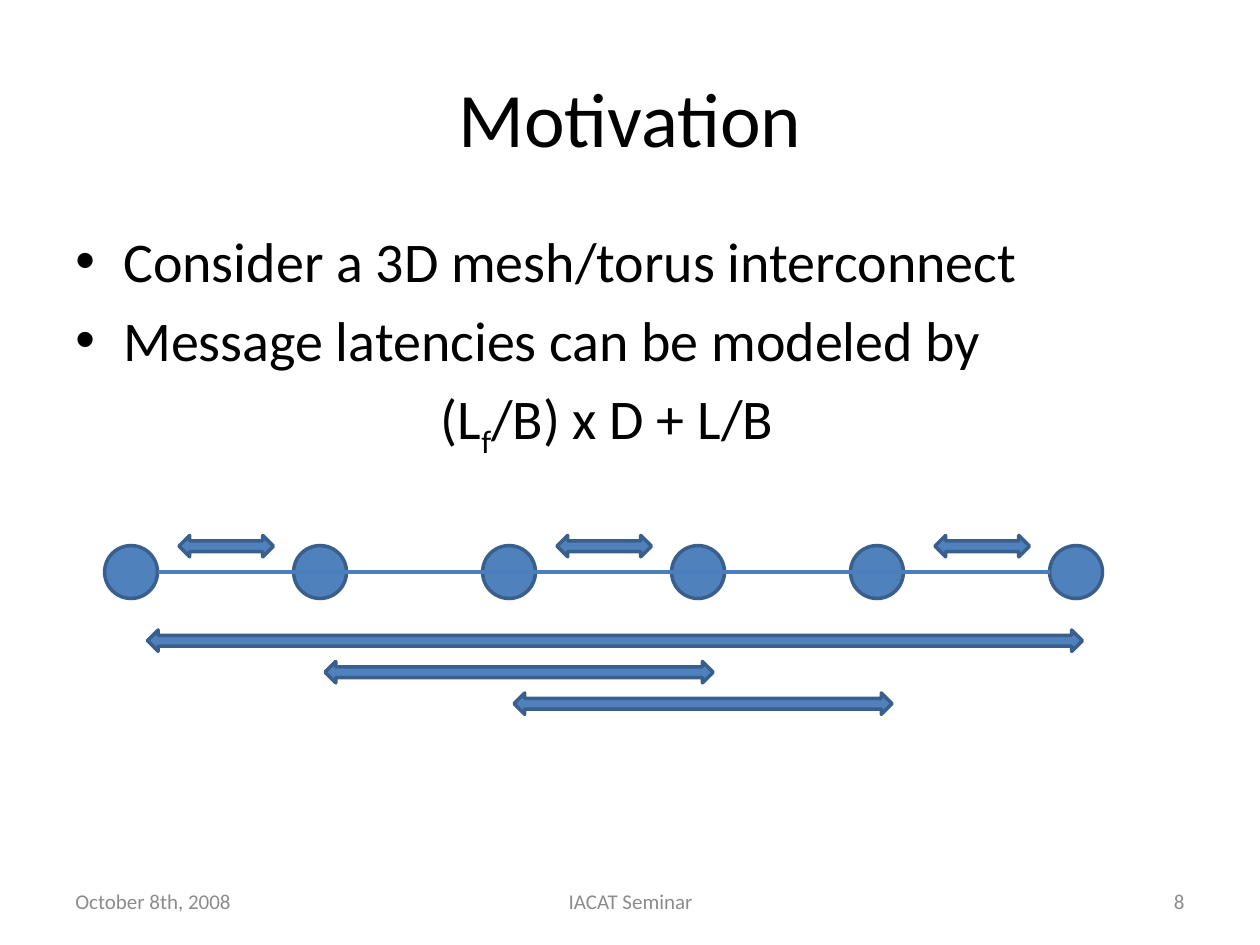
from lxml import etree
from pptx import Presentation
from pptx.dml.color import RGBColor
from pptx.enum.shapes import MSO_CONNECTOR, MSO_SHAPE
from pptx.enum.text import MSO_ANCHOR, PP_ALIGN
from pptx.oxml.ns import qn
from pptx.util import Inches, Pt

LEFT, MID, RIGHT = PP_ALIGN.LEFT, PP_ALIGN.CENTER, PP_ALIGN.RIGHT
TOP, CENTER = MSO_ANCHOR.TOP, MSO_ANCHOR.MIDDLE
OVAL, ARROW = MSO_SHAPE.OVAL, MSO_SHAPE.LEFT_RIGHT_ARROW
STRAIGHT = MSO_CONNECTOR.STRAIGHT

COLORS = {"text": "000000", "foot": "8C8C8C", "fill": "4F81BD",
          "edge": "3A5F8C", "link": "4B7EBC"}
TITLE = "Motivation"
POINTS = ["Consider a 3D mesh/torus interconnect",
          "Message latencies can be modeled by"]
FORMULA = [("(L", 0), ("f", -25000), ("/B) x D + L/B", 0)]
FOOTER = [("October 8th, 2008", 0.5, 2.33, LEFT),
          ("8", 7.17, 2.33, RIGHT),
          ("IACAT Seminar", 3.42, 3.17, MID)]
NODES = [0.83, 2.33, 3.83, 5.33, 6.75, 8.33]
NODE_TOP, NODE_SIZE = 4.33, 0.42
HOPS = [(1.42 + 3 * i, 4.25, 0.75) for i in range(3)]
PATHS = [(1.17, 5, 7.42), (2.58, 5.25, 3.08), (4.08, 5.5, 3)]
ARROW_SIZE = 0.17


def color(name):
    """Return a named colour."""
    return RGBColor.from_string(COLORS[name])


def style(par, size, name, align=LEFT):
    """Format a paragraph and its runs."""
    par.alignment = align
    for run in par.runs:
        run.font.name = "Calibri"
        run.font.size = Pt(size)
        run.font.color.rgb = color(name)


def add_box(slide, left, top, width, height, anchor):
    """Add a wrapping text box and return its frame."""
    box = slide.shapes.add_textbox(*map(Inches, (left, top, width, height)))
    frame = box.text_frame
    frame.word_wrap = True
    frame.vertical_anchor = anchor
    return frame


def add_part(slide, kind, *place):
    """Add a filled and outlined shape."""
    part = slide.shapes.add_shape(kind, *map(Inches, place))
    part.shadow.inherit = False
    part.fill.solid()
    part.fill.fore_color.rgb = color("fill")
    part.line.color.rgb = color("edge")
    part.line.width = Pt(2)


def add_title(slide):
    """Place and format the title."""
    title = slide.shapes.title
    title.left, title.top, title.width, title.height = map(
        Inches, (0.5, 0.3, 9, 1.25))
    title.text_frame.text = TITLE
    title.text_frame.vertical_anchor = CENTER
    style(title.text_frame.paragraphs[0], 44, "text", MID)


def add_body(slide):
    """Add the bullets and the indented formula."""
    frame = add_box(slide, 0.5, 1.75, 9, 4.95, TOP)
    frame.text = "\n".join(POINTS)
    for par in frame.paragraphs:
        props = par._p.get_or_add_pPr()
        props.set("marL", str(Inches(0.38)))
        props.set("indent", str(-Inches(0.38)))
        etree.SubElement(props, qn("a:buFont")).set("typeface", "Arial")
        etree.SubElement(props, qn("a:buChar")).set("char", "•")
    par = frame.add_paragraph()
    par._p.get_or_add_pPr().set("marL", str(Inches(2.9)))
    for text, base in FORMULA:
        run = par.add_run()
        run.text = text
        if base:
            run._r.get_or_add_rPr().set("baseline", str(base))
    for par in frame.paragraphs:
        par.space_before = Pt(6.4)
        style(par, 32, "text")


def add_mesh(slide):
    """Draw the nodes, the message arrows and the link."""
    for left in NODES:
        add_part(slide, OVAL, left, NODE_TOP, NODE_SIZE, NODE_SIZE)
    for left, top, width in HOPS + PATHS:
        add_part(slide, ARROW, left, top, width, ARROW_SIZE)
    mid = NODE_TOP + NODE_SIZE / 2
    ends = NODES[0] + NODE_SIZE, mid, NODES[-1], mid
    link = slide.shapes.add_connector(STRAIGHT, *map(Inches, ends))
    link.line.color.rgb = color("link")
    link.line.width = Pt(2)
    etree.SubElement(link._element.spPr, qn("a:effectLst"))


def add_footer(slide):
    """Add the date, page number and event."""
    for text, left, width, align in FOOTER:
        frame = add_box(slide, left, 6.95, width, 0.4, CENTER)
        frame.text = text
        style(frame.paragraphs[0], 12, "foot", align)


def main():
    """Build and save the slide."""
    deck = Presentation()
    deck.slide_width, deck.slide_height = Inches(10), Inches(7.5)
    slide = deck.slides.add_slide(deck.slide_layouts[5])
    for build in (add_title, add_body, add_mesh, add_footer):
        build(slide)
    deck.save("out.pptx")


if __name__ == "__main__":
    main()
